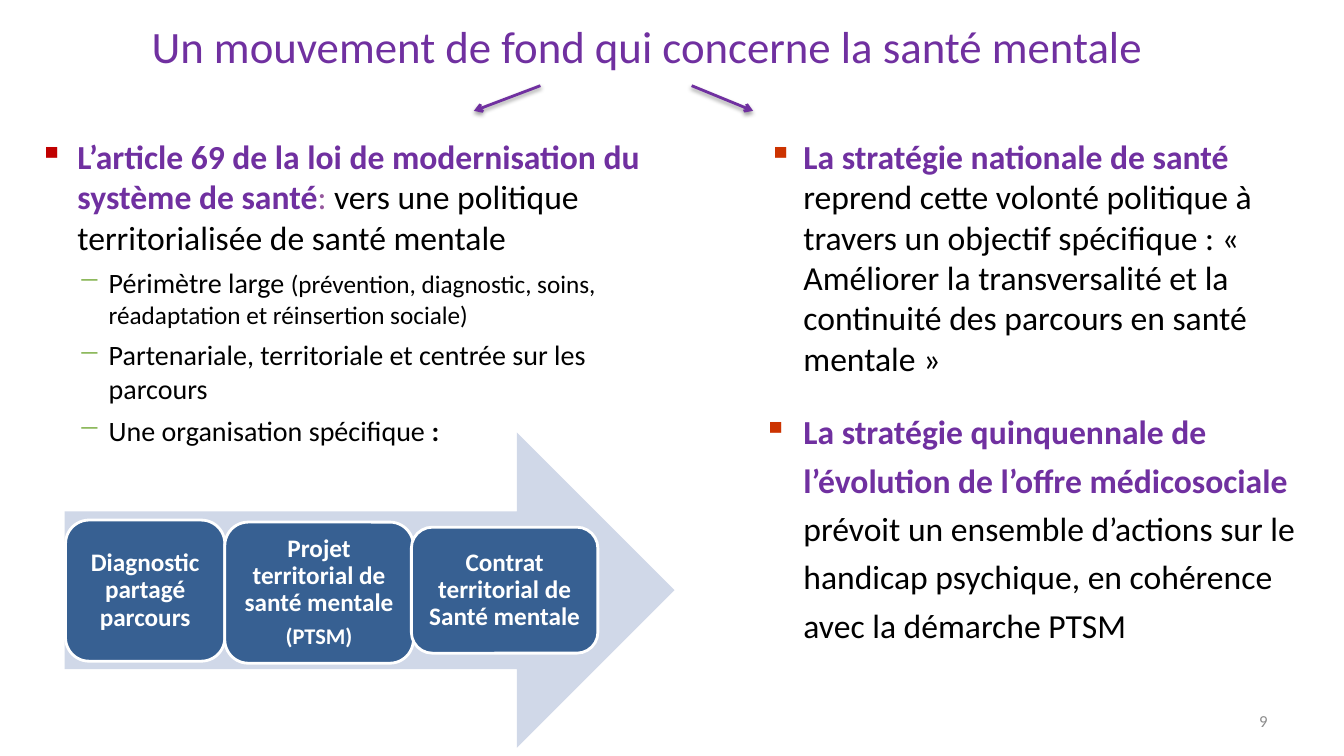
from lxml.etree import SubElement
from pptx import Presentation
from pptx.dml.color import RGBColor
from pptx.enum.shapes import MSO_CONNECTOR, MSO_SHAPE
from pptx.enum.text import MSO_ANCHOR, MSO_AUTO_SIZE, PP_ALIGN
from pptx.oxml import parse_xml
from pptx.oxml.ns import nsdecls, qn
from pptx.util import Inches, Pt

FONT = "Calibri"
PURPLE = RGBColor(0x70, 0x30, 0xA0)
MAUVE = RGBColor(0x96, 0x59, 0x9D)
BLACK = RGBColor(0, 0, 0)
WHITE = RGBColor(255, 255, 255)
GREY = RGBColor(0x8C, 0x8C, 0x8C)
RED = RGBColor(0xC0, 0, 0)
GREEN = RGBColor(0x6C, 0xA5, 0x2D)
ORANGE = RGBColor(0xCC, 0x33, 0)
PALE = RGBColor(0xD0, 0xD8, 0xE8)
BLUE = RGBColor(0x37, 0x60, 0x92)

TITLE = "Un mouvement de fond qui concerne la santé mentale"

# Bullet styles: mark, colour, left margin, hanging indent
LAW = ("▪", RED, 0.38, 0.38)
DASH = ("─", GREEN, 0.69, 0.3)
PLAN = ("▪", ORANGE, 0.4, 0.35)
OFFER = ("▪", ORANGE, 0.4, 0.4)

# Paragraphs: bullet, space before, line spacing, runs (text, size, colour, bold)
LEFT = [
    (LAW, 0, 1, [
        ("L’article 69 de la loi de modernisation du système de santé", 24, PURPLE, True),
        (": ", 24, MAUVE, False),
        ("vers une politique territorialisée de santé mentale", 24, BLACK, False)]),
    (DASH, 6, 1, [
        ("Périmètre large ", 20, BLACK, False),
        ("(prévention, diagnostic, soins, réadaptation et réinsertion sociale)",
         18, BLACK, False)]),
    (DASH, 6, 1, [
        ("Partenariale, territoriale et centrée sur les parcours", 20, BLACK, False)]),
    (DASH, 6, 1, [
        ("Une organisation spécifique ", 20, BLACK, False),
        (":", 20, BLACK, True)]),
]
RIGHT = [
    (PLAN, 0, 1, [
        ("La stratégie nationale de santé ", 24, PURPLE, True),
        ("reprend cette volonté politique à travers un objectif spécifique : "
         "« Améliorer la transversalité et la continuité des parcours en santé mentale »",
         24, BLACK, False)]),
    (OFFER, 18, 1.2, [
        ("La stratégie quinquennale de l’évolution de l’offre médicosociale ",
         24, PURPLE, True),
        ("prévoit un ensemble d’actions sur le handicap psychique, "
         "en cohérence avec la démarche PTSM", 24, BLACK, False)]),
]
COLUMNS = [((0.29, 1.3, 6.44, 3.21), LEFT), ((7.47, 1.3, 5.52, 5.2), RIGHT)]

STEPS = [
    ((0.65, 5.16, 1.58, 1.4), [("Diagnostic partagé parcours", 18)]),
    ((2.23, 5.18, 1.87, 1.4), [("Projet territorial de santé mentale", 18), ("(PTSM)", 16)]),
    ((4.08, 5.23, 1.85, 1.25), [("Contrat territorial de Santé mentale", 18)]),
]
ARROWS = [(5.36, 0.85, 4.7, 1.1), (6.86, 0.85, 7.47, 1.1)]
SHADOW = (f'<a:effectLst {nsdecls("a")}><a:outerShdw blurRad="{Pt(3.1)}" '
          f'dist="{Pt(1.6)}" dir="5400000" rotWithShape="0"><a:srgbClr val="000000">'
          '<a:alpha val="38000"/></a:srgbClr></a:outerShdw></a:effectLst>')


def inches(values):
    return [Inches(v) for v in values]


def style(font, size, color, bold=False):
    font.name, font.size, font.bold = FONT, Pt(size), bold
    font.color.rgb = color


def add_bullet(para, mark, color, left, hang):
    props = para._p.get_or_add_pPr()
    props.set("marL", str(Inches(left)))
    props.set("indent", str(-Inches(hang)))
    tint = SubElement(props, qn("a:buClr"))
    SubElement(tint, qn("a:srgbClr")).set("val", str(color))
    SubElement(props, qn("a:buChar")).set("char", mark)


def add_column(slide, box, paras):
    frame = slide.shapes.add_textbox(*inches(box)).text_frame
    frame.word_wrap = True
    for i, (bullet, before, spacing, runs) in enumerate(paras):
        para = frame.add_paragraph() if i else frame.paragraphs[0]
        add_bullet(para, *bullet)
        para.space_before, para.line_spacing = Pt(before), spacing
        for text, *look in runs:
            run = para.add_run()
            run.text = text
            style(run.font, *look)


def add_block(slide, kind, box, fill):
    shape = slide.shapes.add_shape(kind, *inches(box))
    shape.shadow.inherit = False
    shape.fill.solid()
    shape.fill.fore_color.rgb = fill
    shape.line.fill.background()
    return shape


def add_step(slide, box, lines):
    shape = add_block(slide, MSO_SHAPE.ROUNDED_RECTANGLE, box, BLUE)
    shape.line.color.rgb = WHITE
    shape.line.width = Pt(2)
    frame = shape.text_frame
    frame.word_wrap = True
    frame.vertical_anchor = MSO_ANCHOR.MIDDLE
    frame.margin_left = frame.margin_right = Inches(0.07)
    frame.margin_top = frame.margin_bottom = Inches(0.07)
    frame.text = "\n".join(text for text, size in lines)
    for para, (text, size) in zip(frame.paragraphs, lines):
        para.alignment, para.line_spacing = PP_ALIGN.CENTER, 0.9
        style(para.runs[0].font, size, WHITE, True)
    for para in frame.paragraphs[:-1]:
        para.space_after = Pt(6)


def add_arrow(slide, ends):
    arrow = slide.shapes.add_connector(MSO_CONNECTOR.STRAIGHT, *inches(ends))
    arrow.line.color.rgb = PURPLE
    arrow.line.width = Pt(2)
    SubElement(arrow.line._get_or_add_ln(), qn("a:tailEnd")).set("type", "arrow")
    arrow._element.spPr.append(parse_xml(SHADOW))


def main():
    deck = Presentation()
    deck.slide_width, deck.slide_height = Inches(13.33), Inches(7.5)
    slide = deck.slides.add_slide(deck.slide_layouts[5])

    title = slide.shapes.title
    title.left, title.top, title.width, title.height = inches((0.92, 0, 11, 0.9))
    frame = title.text_frame
    frame.text = TITLE
    frame.auto_size = MSO_AUTO_SIZE.NONE
    frame.vertical_anchor = MSO_ANCHOR.MIDDLE
    frame.paragraphs[0].alignment = PP_ALIGN.CENTER
    style(frame.paragraphs[0].runs[0].font, 32, PURPLE)

    for box, paras in COLUMNS:
        add_column(slide, box, paras)
    add_block(slide, MSO_SHAPE.RIGHT_ARROW, (0.64, 4.29, 6.05, 3.13), PALE)
    for box, lines in STEPS:
        add_step(slide, box, lines)
    for ends in ARROWS:
        add_arrow(slide, ends)

    number = slide.shapes.add_textbox(*inches((9.56, 6.95, 3.11, 0.4))).text_frame
    number.text = "9"
    number.word_wrap = True
    number.vertical_anchor = MSO_ANCHOR.MIDDLE
    number.paragraphs[0].alignment = PP_ALIGN.RIGHT
    style(number.paragraphs[0].runs[0].font, 12, GREY)

    deck.save("out.pptx")


if __name__ == "__main__":
    main()
